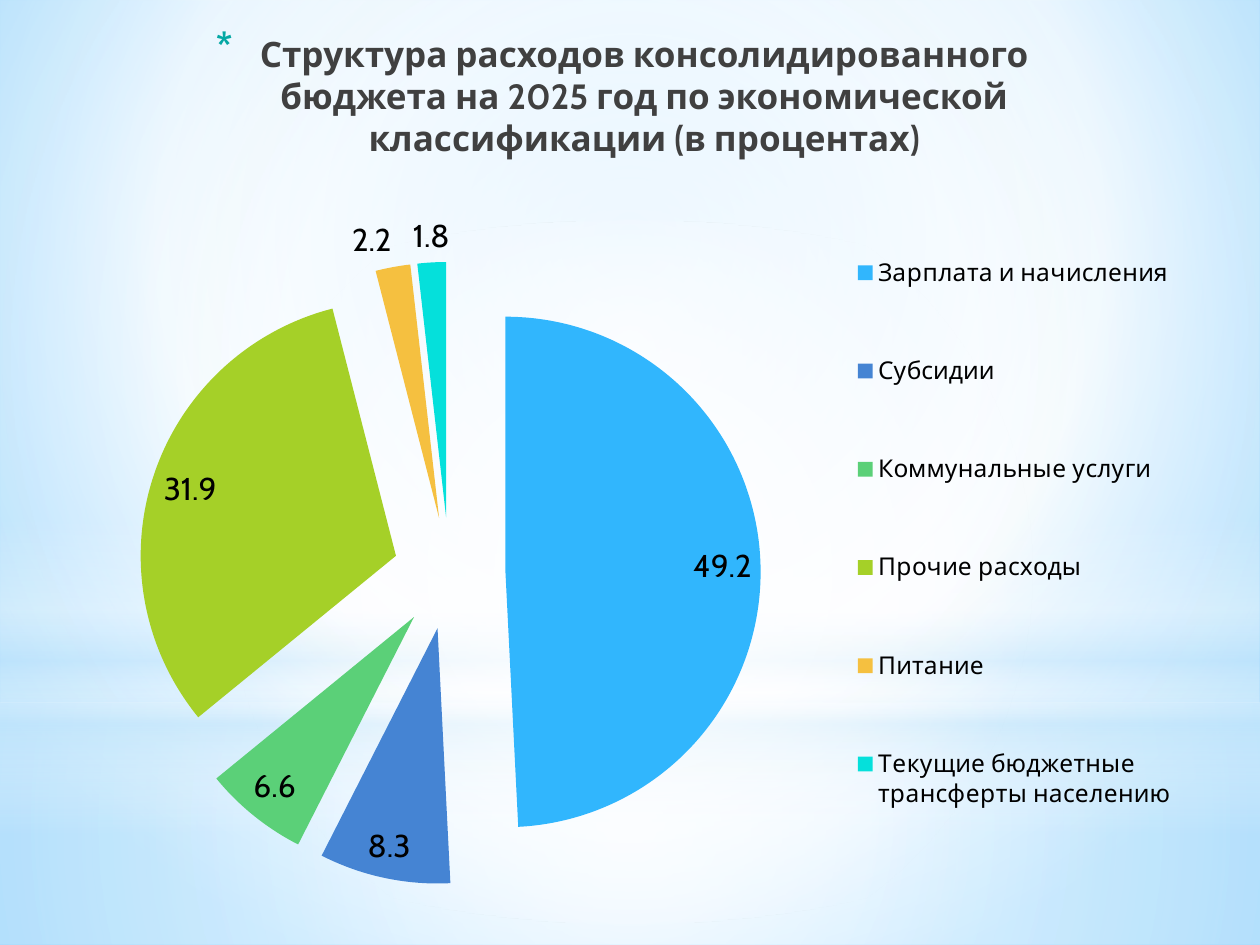
from pptx import Presentation
from pptx import util as u
from pptx.chart.data import CategoryChartData
from pptx.dml.color import RGBColor
from pptx.enum import chart as charts, shapes, text
from pptx.oxml import parse_xml
from pptx.oxml.ns import nsdecls

# Content
TITLE = ("Структура расходов консолидированного бюджета на 2025 год "
         "по экономической классификации (в процентах)")
EXPENSES = [  # category, percent, slice colour
    ("Зарплата и начисления", 49.2, RGBColor(0x31, 0xB6, 0xFD)),
    ("Субсидии", 8.3, RGBColor(0x45, 0x84, 0xD3)),
    ("Коммунальные услуги", 6.6, RGBColor(0x5B, 0xD0, 0x78)),
    ("Прочие расходы", 31.9, RGBColor(0xA5, 0xD0, 0x28)),
    ("Питание", 2.2, RGBColor(0xF5, 0xC0, 0x40)),
    ("Текущие бюджетные трансферты населению", 1.8, RGBColor(0x05, 0xE0, 0xDB)),
]

# Style
FONT = "Cabin"
DARK = RGBColor(0x40, 0x40, 0x40)
BLACK = RGBColor(0, 0, 0)
TEAL = RGBColor(0x04, 0xA8, 0xA4)
WIDTH, HEIGHT = 25.4, 19.05
CENTRE = (50, 50, 50, 50)

# Gradient stops: position, colour, opacity (all in percent)
SKY = [(0, "B0E0FF", 100), (60, "FFFFFF", 100), (100, "6BC5FF", 100)]
FLOOR = [(0, "FFFFFF", 91), (37, "FFFFFF", 76), (100, "C6E7FC", 79)]
WALL = [(0, "FFFFFF", 89), (48, "FFFFFF", 62), (100, "C6E7FC", 79)]
HORIZON = [(0, "FFFFFF", 0), (29, "FFFFFF", 30), (45, "C6E7FC", 40),
           (55, "FFFFFF", 26), (65, "C6E7FC", 60), (100, "FFFFFF", 0)]
GLOW = [(0, "FFFFFF", 100), (56, "FFFFFF", 0)]
RECT, OVAL = shapes.MSO_SHAPE.RECTANGLE, shapes.MSO_SHAPE.OVAL
BACKDROP = [  # preset, top, height, stops, focus (None = top to bottom)
    (RECT, 14.17, 4.88, FLOOR, CENTRE),
    (RECT, 0, 14.17, WALL, CENTRE),
    (RECT, 10.46, 6.35, HORIZON, None),
    (OVAL, 4.45, 14.17, GLOW, CENTRE),
]


def set_gradient(fill, owner, stops, focus):
    """Give the fill found inside owner a circular or vertical gradient."""
    fill.gradient()
    old = owner.xpath(".//a:gradFill")[0]
    marks = "".join(
        f'<a:gs pos="{pos * 1000}"><a:srgbClr val="{colour}">'
        f'<a:alpha val="{opacity * 1000}"/></a:srgbClr></a:gs>'
        for pos, colour, opacity in stops)
    if focus:
        sides = " ".join(f'{side}="{value * 1000}"' for side, value in zip("ltrb", focus))
        course = f'<a:path path="circle"><a:fillToRect {sides}/></a:path>'
    else:
        course = '<a:lin ang="5400000" scaled="0"/>'
    new = parse_xml(f'<a:gradFill {nsdecls("a")} rotWithShape="1">'
                    f'<a:gsLst>{marks}</a:gsLst>{course}</a:gradFill>')
    old.getparent().replace(old, new)


def make_layout(x, y, w, h, inner=False):
    """Return a manual chart layout in fractions of the chart."""
    target = '<c:layoutTarget val="inner"/>' if inner else ""
    return parse_xml(
        f'<c:layout {nsdecls("c")}><c:manualLayout>{target}'
        '<c:xMode val="edge"/><c:yMode val="edge"/>'
        f'<c:x val="{x}"/><c:y val="{y}"/><c:w val="{w}"/><c:h val="{h}"/>'
        '</c:manualLayout></c:layout>')


def set_layout(element, layout):
    for old in element.xpath("./c:layout"):
        element.remove(old)
    before = element.xpath("./c:legendPos")
    if before:
        before[0].addnext(layout)
    else:
        element.insert(0, layout)


def add_backdrop(page):
    set_gradient(page.background.fill, page.element, SKY, (20, 10, 20, 60))
    for preset, top, height, stops, focus in BACKDROP:
        shape = page.shapes.add_shape(preset, 0, u.Cm(top), u.Cm(WIDTH), u.Cm(height))
        shape.shadow.inherit = False
        shape.line.fill.background()
        set_gradient(shape.fill, shape.element, stops, focus)


def add_title(page):
    box = page.shapes.title
    box.element.getparent().append(box.element)  # in front of the backdrop
    box.left, box.top, box.width, box.height = map(u.Cm, (3.5, 0.53, 18.08, 3.18))
    frame = box.text_frame
    frame.text = TITLE
    frame.word_wrap = True
    frame.auto_size = text.MSO_AUTO_SIZE.NONE
    frame.vertical_anchor = text.MSO_ANCHOR.TOP
    para = frame.paragraphs[0]
    para.alignment = text.PP_ALIGN.CENTER
    font = para.runs[0].font
    font.name, font.size, font.bold = FONT, u.Pt(20), True
    font.color.rgb = DARK
    # Asterisk bullet with a hanging indent
    props = para.runs[0].font._element.getparent().getparent().get_or_add_pPr()
    props.set("marL", str(u.Cm(0.89)))
    props.set("indent", str(-u.Cm(0.89)))
    for bullet in (f'<a:buClr {nsdecls("a")}><a:srgbClr val="{TEAL}"/></a:buClr>',
                   f'<a:buSzPct {nsdecls("a")} val="128000"/>',
                   f'<a:buChar {nsdecls("a")} char="*"/>'):
        props.append(parse_xml(bullet))


def add_pie(page):
    names, values, colours = zip(*EXPENSES)
    data = CategoryChartData(number_format="0.0")
    data.categories = names
    data.add_series("Series 1", values)
    chart = page.shapes.add_chart(
        charts.XL_CHART_TYPE.PIE, u.Cm(0.89), u.Cm(3.53), u.Cm(23.01), u.Cm(14.6), data).chart
    chart.has_title = False
    chart.font.name, chart.font.size = FONT, u.Pt(18)
    chart.font.color.rgb = BLACK

    # Slices and their labels
    plot = chart.plots[0]
    plot.vary_by_categories = True
    series = plot.series[0]
    for index, colour in enumerate(colours):
        fill = series.points[index].format.fill
        fill.solid()
        fill.fore_color.rgb = colour
    series_xml = series._element
    series_xml.xpath("./c:dPt")[0].addprevious(
        parse_xml(f'<c:explosion {nsdecls("c")} val="22"/>'))
    for point in series_xml.xpath("./c:dPt"):
        point.xpath("./c:spPr")[0].addprevious(
            parse_xml(f'<c:explosion {nsdecls("c")} val="22"/>'))
    labels = series.data_labels
    labels.show_value = True
    labels.number_format, labels.number_format_is_linked = "0.0", False
    labels.position = charts.XL_LABEL_POSITION.BEST_FIT

    # Legend and placement
    chart.has_legend = True
    legend = chart.legend
    legend.position = charts.XL_LEGEND_POSITION.RIGHT
    legend.include_in_layout = False
    legend.font.name, legend.font.size = FONT, u.Pt(14)
    legend.font.color.rgb = BLACK
    set_layout(legend._element, make_layout(0.72, 0.02, 0.28, 0.95))
    plot_area = plot._element.getparent()
    set_layout(plot_area, make_layout(0.01, 0.12, 0.69, 0.86, inner=True))


def main():
    deck = Presentation()
    deck.slide_width, deck.slide_height = u.Cm(WIDTH), u.Cm(HEIGHT)
    page = deck.slides.add_slide(deck.slide_layouts[5])
    add_backdrop(page)
    add_title(page)
    add_pie(page)
    deck.save("out.pptx")


if __name__ == "__main__":
    main()
